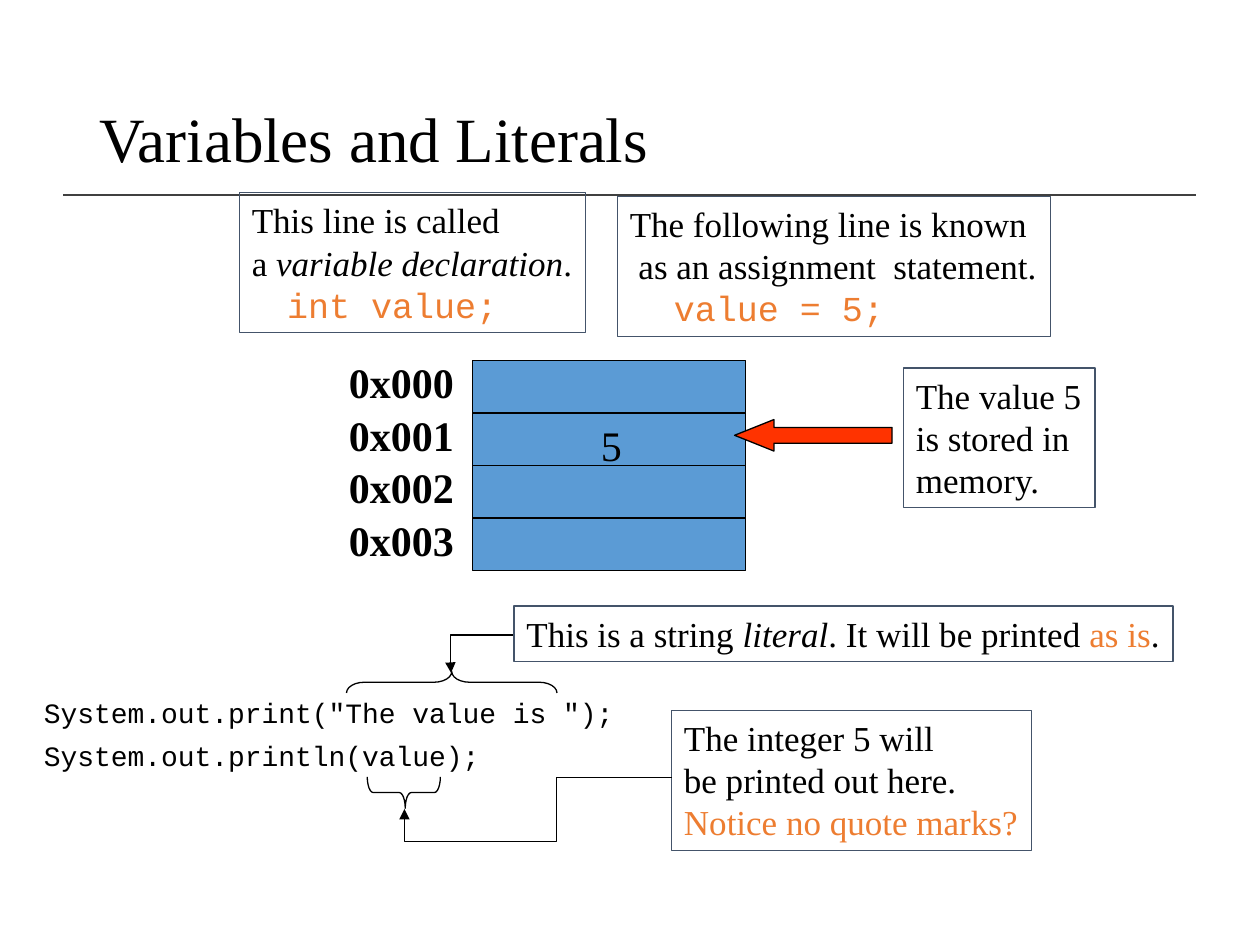
from lxml import etree
from pptx import Presentation
from pptx.dml.color import RGBColor
from pptx.enum import shapes, text
from pptx.oxml.ns import qn
from pptx.util import Inches, Pt

SERIF, MONO = "Times New Roman", "Courier New"
BLACK, SLATE, ORANGE = "000000", "44546A", "ED7D31"
BLUE, RED, GRAY = "5B9BD5", "FF3300", "404040"
KIND = shapes.MSO_SHAPE


def paint(color, value):
    color.rgb = RGBColor.from_string(value)


def style(run, size, font=SERIF, color=BLACK, bold=False, italic=False):
    run.font.size, run.font.name = Pt(size), font
    run.font.bold, run.font.italic = bold, italic
    paint(run.font.color, color)


def shape(slide, kind, box, fill=None, line=BLACK):
    item = slide.shapes.add_shape(kind, *map(Inches, box))
    item.shadow.inherit = False
    if fill:
        item.fill.solid()
        paint(item.fill.fore_color, fill)
    else:
        item.fill.background()
    paint(item.line.color, line)
    item.line.width = Pt(0.75)
    return item


def label(slide, box, words, size, **look):
    frame = slide.shapes.add_textbox(*map(Inches, box)).text_frame
    frame.text = words
    frame.word_wrap = False
    for para in frame.paragraphs:
        style(para.runs[0], size, **look)
    return frame


def note(slide, box, lines):
    """Outlined box; each line is (indent, [(words, look), ...])."""
    frame = shape(slide, KIND.RECTANGLE, box, line=SLATE).text_frame
    frame.word_wrap = False
    frame.auto_size = text.MSO_AUTO_SIZE.SHAPE_TO_FIT_TEXT
    frame.vertical_anchor = text.MSO_ANCHOR.TOP
    for i, (indent, parts) in enumerate(lines):
        para = frame.add_paragraph() if i else frame.paragraphs[0]
        para.alignment = text.PP_ALIGN.LEFT
        if indent:
            para._p.get_or_add_pPr().set("marL", str(Inches(indent)))
        for words, look in parts:
            run = para.add_run()
            run.text = words
            style(run, 20, **look)


def plain(*lines):
    return [(0, [(words, {})]) for words in lines]


def link(slide, kind, ends, color, width):
    item = slide.shapes.add_connector(kind, *map(Inches, ends))
    paint(item.line.color, color)
    item.line.width = Pt(width)
    etree.SubElement(item._element.spPr, qn("a:effectLst"))
    return item


def elbow(slide, ends, preset, bends):
    """Arrow that leaves leftwards and turns at the given fractions."""
    item = link(slide, shapes.MSO_CONNECTOR.ELBOW, ends, BLACK, 0.75)
    props = item._element.spPr
    frame = props.find(qn("a:xfrm"))
    frame.attrib.pop("flipH", None)
    frame.set("rot", "10800000")
    frame.set("flipV", "1")
    geom = props.find(qn("a:prstGeom"))
    geom.set("prst", preset)
    guides = geom.find(qn("a:avLst"))
    if guides is None:
        guides = etree.SubElement(geom, qn("a:avLst"))
    for i, bend in enumerate(bends, 1):
        etree.SubElement(guides, qn("a:gd"), name=f"adj{i}",
                         fmla=f"val {round(bend * 100000)}")
    etree.SubElement(props.find(qn("a:ln")), qn("a:tailEnd"), type="triangle")


def brace(slide, box, turn, depth, point):
    item = shape(slide, KIND.LEFT_BRACE, box)
    item.rotation = turn
    item.adjustments[0], item.adjustments[1] = depth, point


def header(slide, left, top, width, height):
    frame = label(slide, (left, top, width, height),
                  "Variables and Literals", 36)
    frame.word_wrap = True
    frame.vertical_anchor = text.MSO_ANCHOR.MIDDLE
    frame.paragraphs[0].line_spacing = 0.9
    link(slide, shapes.MSO_CONNECTOR.STRAIGHT, (0.5, 1.55, 9.49, 1.55), GRAY, 1)


def terms(slide):
    code = {"font": MONO, "color": ORANGE}
    note(slide, (1.9, 1.53, 2.75, 1.11), plain("This line is called") + [
        (0, [("a ", {}), ("variable declaration", {"italic": True}), (".", {})]),
        (0.28, [("int value;", code)])])
    note(slide, (4.9, 1.56, 3.44, 1.11), plain(
        "The following line is known", " as an assignment  statement.") + [
        (0.35, [("value = 5;", code)])])


def memory(slide, left, top, width, height):
    names = ["0x000", "0x001", "0x002", "0x003"]
    step = height / len(names)
    for i, name in enumerate(names):
        y = top + i * step
        shape(slide, KIND.RECTANGLE, (left, y, width, step), BLUE)
        label(slide, (left - 1.08, y - 0.08, 1.03, 0.5), name, 24, bold=True)
    label(slide, (left + 0.92, top + step, 0.37, 0.5), "5", 24)
    note(slide, (7.17, 2.92, 1.52, 1.11),
         plain("The value 5", "is stored in", "memory."))
    arrow = shape(slide, KIND.LEFT_ARROW, (5.83, 3.33, 1.25, 0.25), RED)
    arrow.adjustments[0], arrow.adjustments[1] = 0.5, 1.25


def output(slide, left, top, width, height):
    frame = label(slide, (left, top, width, height),
                  'System.out.print("The value is ");\n'
                  "System.out.println(value);", 16, font=MONO)
    for para in frame.paragraphs:
        para.line_spacing = 0.9
        para.space_before = para.space_after = Pt(3.6)
    elbow(slide, (4.08, 5.04, 3.58, 5.34), "bentConnector3", [1.01])
    note(slide, (4.08, 4.81, 5.23, 0.44), [(0, [
        ("This is a string ", {}), ("literal", {"italic": True}),
        (". It will be printed ", {}), ("as is", {"color": ORANGE}),
        (".", {})])])
    brace(slide, (3.5, 4.58, 0.17, 1.67), 90, 0.83, 0.5)
    brace(slide, (3.08, 6, 0.25, 0.58), 270, 0.19, 0.52)
    note(slide, (5.33, 5.64, 2.86, 1.11),
         plain("The integer 5 will", "be printed out here.") + [
             (0, [("Notice no quote marks?", {"color": ORANGE})])])
    elbow(slide, (5.33, 6.17, 3.21, 6.42), "bentConnector4", [0.43, 2.03])


def main():
    deck = Presentation()
    deck.slide_width, deck.slide_height = Inches(10), Inches(7.5)
    slide = deck.slides.add_slide(deck.slide_layouts[6])
    header(slide, 0.69, 0.4, 8.62, 1.45)
    terms(slide)
    memory(slide, 3.75, 2.86, 2.17, 1.67)
    output(slide, 0.25, 5.5, 4.74, 0.74)
    deck.save("out.pptx")


if __name__ == "__main__":
    main()
